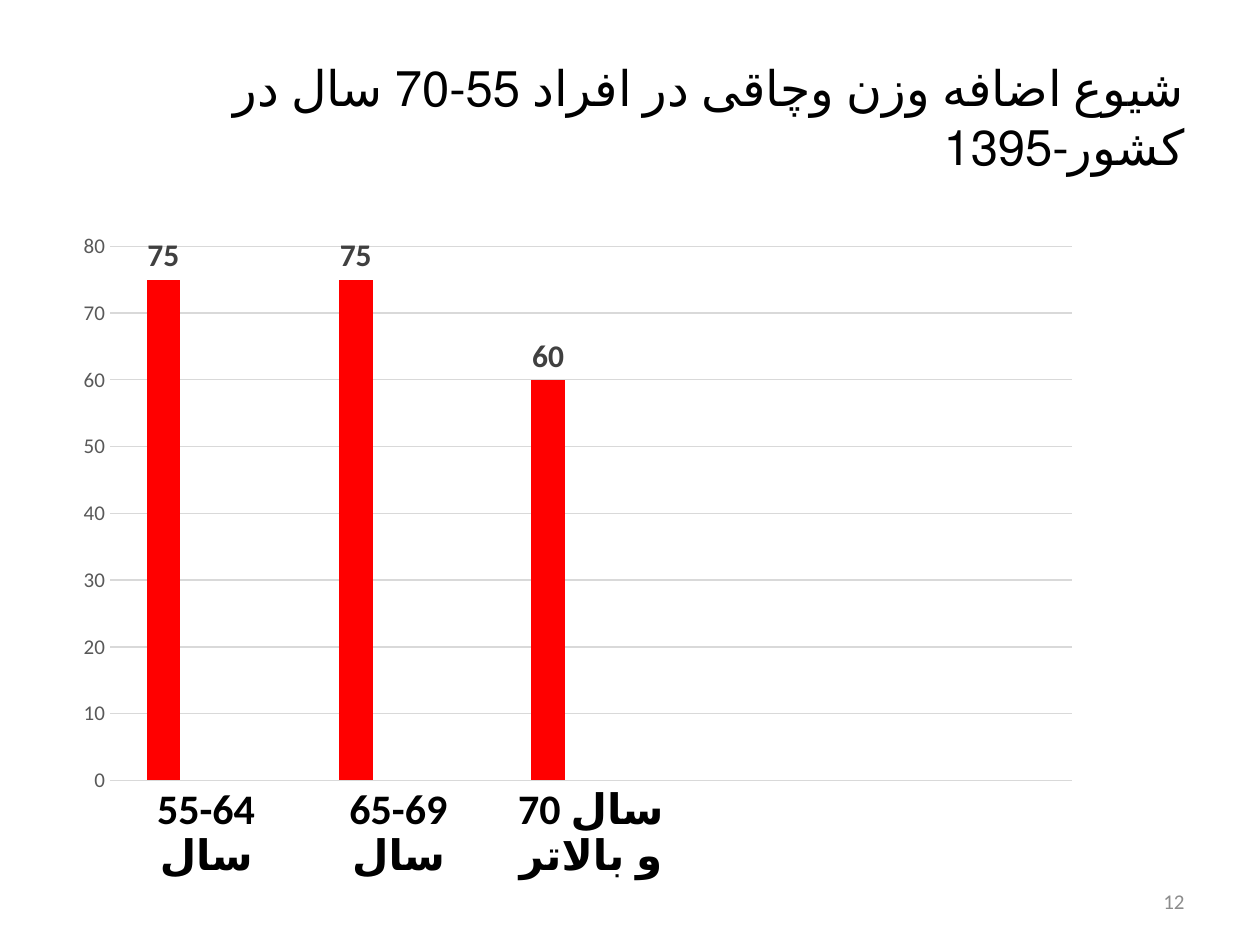
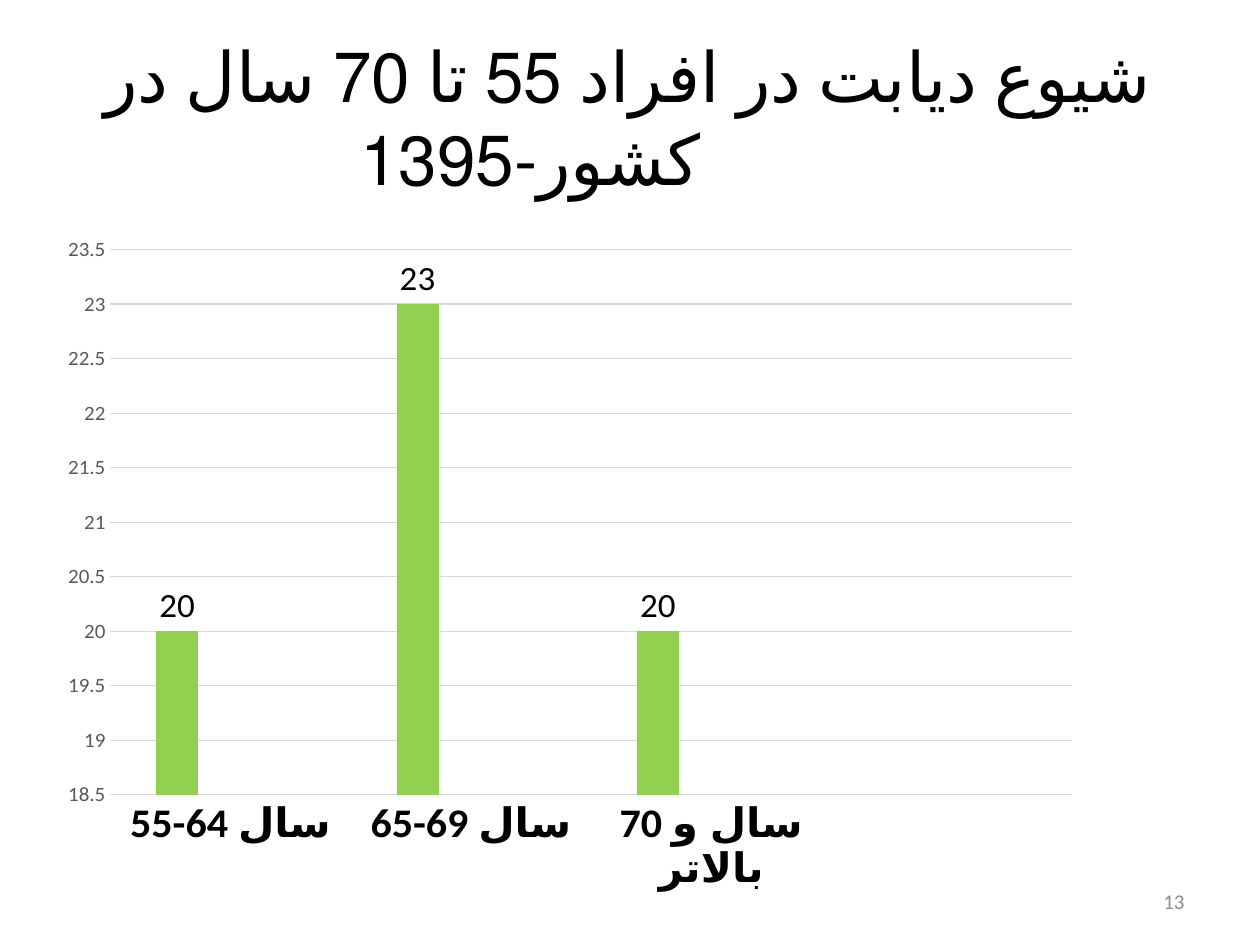
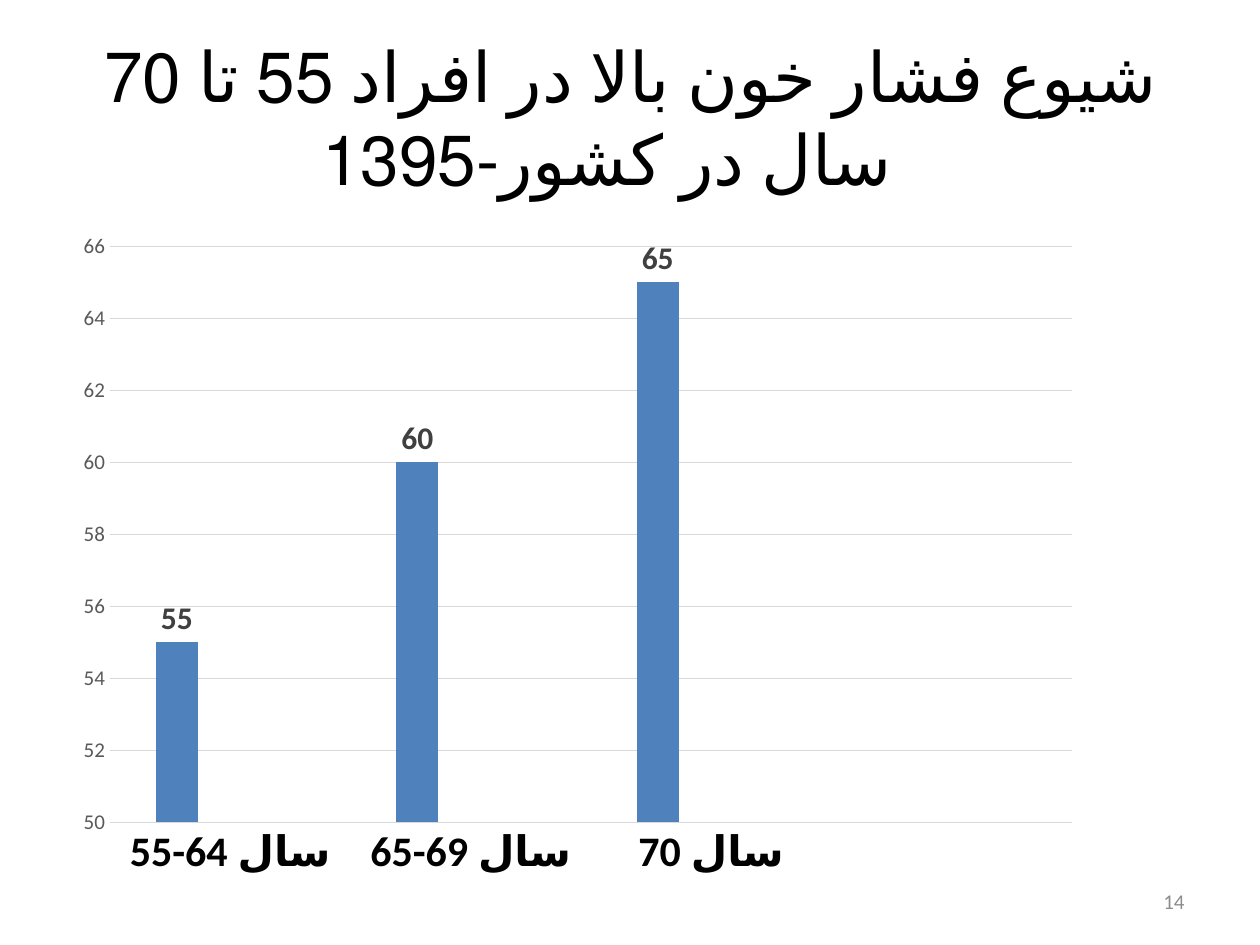
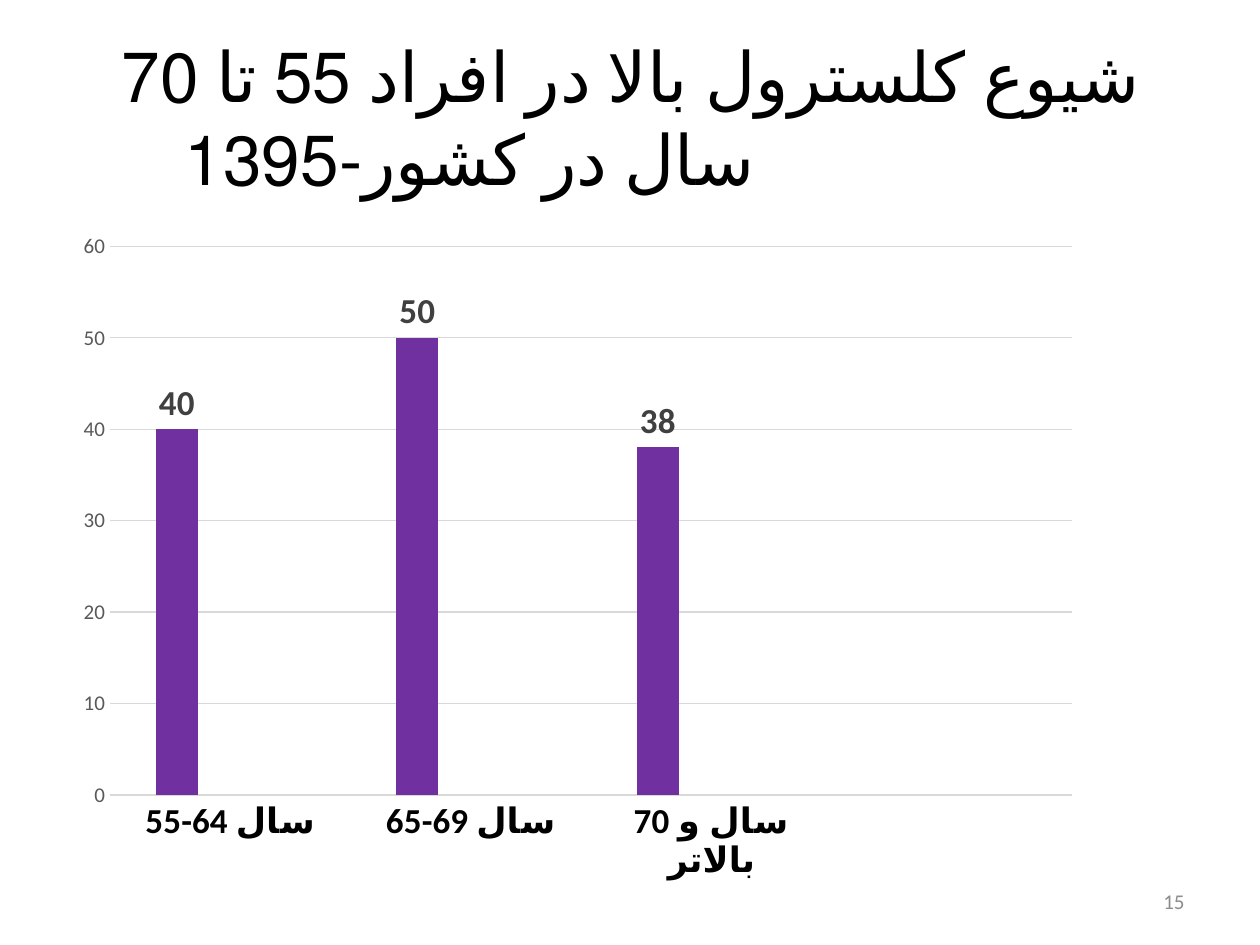
from lxml import etree
from pptx import Presentation
from pptx.chart.data import CategoryChartData
from pptx.dml.color import RGBColor
from pptx.enum.chart import XL_CHART_TYPE, XL_LABEL_POSITION, XL_TICK_MARK
from pptx.enum.lang import MSO_LANGUAGE_ID
from pptx.enum.text import MSO_ANCHOR, PP_ALIGN
from pptx.util import Inches, Pt

COLUMNS = XL_CHART_TYPE.COLUMN_CLUSTERED
OUTSIDE_END = XL_LABEL_POSITION.OUTSIDE_END
NO_TICK = XL_TICK_MARK.NONE
MIDDLE = MSO_ANCHOR.MIDDLE
LEFT, RIGHT = PP_ALIGN.LEFT, PP_ALIGN.RIGHT
PERSIAN = MSO_LANGUAGE_ID.FARSI

FONT = "Calibri"
COLORS = {
    "text": "000000", "number": "8C8C8C", "scale": "595959",
    "label": "404040", "grid": "D9D9D9",
    "red": "FF0000", "green": "92D050", "blue": "4F81BD", "purple": "7030A0",
    "second": "C0504D", "third": "9BBB59",
}
TITLE_AREA = (0.5, 0.3, 9, 1.25)
CHART_AREA = (0.5, 1.75, 8.17, 5.33)
NUMBER_AREA = (7.17, 6.95, 2.33, 0.4)
FIRST_NUMBER = 12

AGES = ["55-64 سال", "65-69 سال", "70 سال و بالاتر"]
# "scale" is the value axis: minimum, maximum, step
# "slots" is the number of category places, filled or free
# "indents" are the starts of a title's first line and of its second
SLIDES = [
    {"title": "شیوع اضافه وزن وچاقی در افراد 55-70 سال در کشور-1395",
     "title_format": {"size": 28, "align": RIGHT, "rtl": True},
     "ages": AGES, "values": [75, 75, 60], "slots": 5, "color": "red",
     "scale": (0, 80, 10), "age_size": 24,
     "label": {"size": 18, "bold": True, "color": "label"},
     "free_label": {"size": 16, "bold": True, "color": "label"}},
    {"title": "شیوع دیابت در افراد 55 تا 70 سال در کشور-1395",
     "title_format": {"size": 39.6, "indents": (0.23, 2.26)},
     "ages": AGES, "values": [20, 23, 20], "slots": 4, "color": "green",
     "scale": (18.5, 23.5, 0.5), "age_size": 24,
     "label": {"size": 20},
     "plot": {"x": 0.046, "y": 0.045, "w": 0.934, "h": 0.839}},
    {"title": "شیوع فشار خون بالا در افراد 55 تا 70 سال در کشور-1395",
     "title_format": {"size": 39.6, "indents": (0.23, 1.96)},
     "ages": AGES[:2] + ["70 سال"], "values": [55, 60, 65], "slots": 4,
     "color": "blue", "scale": (50, 66, 2), "age_size": 24,
     "label": {"size": 18, "bold": True, "color": "label"}},
    {"title": "شیوع کلسترول بالا در افراد 55 تا 70 سال در کشور-1395",
     "title_format": {"size": 39.6, "indents": (0.37, 0.87)},
     "ages": AGES, "values": [40, 50, 38], "slots": 4, "color": "purple",
     "scale": (0, 60, 10), "age_size": 20,
     "label": {"size": 20, "bold": True, "color": "label"}},
]


def rgb(name):
    return RGBColor.from_string(COLORS[name])


def set_font(font, size, color="text", bold=False):
    font.name, font.size, font.bold = FONT, Pt(size), bold
    font.color.rgb = rgb(color)


def add_text(page, text, area, size, color="text", align=LEFT, rtl=False,
             indents=None, language=None):
    box = page.shapes.add_textbox(*map(Inches, area))
    frame = box.text_frame
    frame.word_wrap = True
    frame.vertical_anchor = MIDDLE
    para = frame.paragraphs[0]
    para.alignment = align
    settings = para._p.get_or_add_pPr()
    if rtl:
        settings.set("rtl", "1")
    if indents:
        first, rest = map(Inches, indents)
        settings.set("marL", str(rest))
        settings.set("indent", str(first - rest))
    span = para.add_run()
    span.text = text
    set_font(span.font, size, color)
    if language:
        span.font.language_id = language


def set_grid_line(line):
    line.color.rgb = rgb("grid")
    line.width = Pt(0.75)


def show_values(series, **font_format):
    labels = series.data_labels
    labels.show_value = True
    labels.position = OUTSIDE_END
    set_font(labels.font, **font_format)


def place_plot(chart, sizes):
    """Fix the inner plot area, in fractions of the chart."""
    area = chart._chartSpace.chart.plotArea
    namespace = etree.QName(area).namespace
    for old in area.findall(f"{{{namespace}}}layout"):
        area.remove(old)
    layout = etree.Element(f"{{{namespace}}}layout")
    manual = etree.SubElement(layout, f"{{{namespace}}}manualLayout")
    settings = {"layoutTarget": "inner", "xMode": "edge", "yMode": "edge", **sizes}
    for tag, value in settings.items():
        etree.SubElement(manual, f"{{{namespace}}}{tag}").set("val", str(value))
    area.insert(0, layout)


def add_columns(page, content):
    slots = content["slots"]
    free = [None] * slots
    data = CategoryChartData()
    data.categories = content["ages"] + [""] * (slots - len(content["ages"]))
    data.add_series("Series 1", (content["values"] + free)[:slots])
    data.add_series("Series 2", free)
    data.add_series("Series 3", free)
    chart = page.shapes.add_chart(COLUMNS, *map(Inches, CHART_AREA), data).chart
    chart.has_title = chart.has_legend = False
    set_font(chart.font, 10)

    plot = chart.plots[0]
    plot.gap_width, plot.overlap, plot.vary_by_categories = 219, -27, False
    for series, color in zip(plot.series, (content["color"], "second", "third")):
        series.format.fill.solid()
        series.format.fill.fore_color.rgb = rgb(color)
    first, *others = plot.series
    show_values(first, **content["label"])
    if "free_label" in content:
        for series in others:
            show_values(series, **content["free_label"])

    ages, scale = chart.category_axis, chart.value_axis
    for axis in (ages, scale):
        axis.major_tick_mark = axis.minor_tick_mark = NO_TICK
    set_font(ages.tick_labels.font, content["age_size"], bold=True)
    set_grid_line(ages.format.line)
    set_font(scale.tick_labels.font, 12, "scale")
    scale.format.line.fill.background()
    set_grid_line(scale.major_gridlines.format.line)
    scale.minimum_scale, scale.maximum_scale, scale.major_unit = content["scale"]
    if "plot" in content:
        place_plot(chart, content["plot"])


def main():
    deck = Presentation()
    deck.slide_width, deck.slide_height = Inches(10), Inches(7.5)
    for number, content in enumerate(SLIDES, FIRST_NUMBER):
        page = deck.slides.add_slide(deck.slide_layouts[6])
        add_text(page, content["title"], TITLE_AREA, language=PERSIAN,
                 **content["title_format"])
        add_columns(page, content)
        add_text(page, str(number), NUMBER_AREA, 12, "number", RIGHT)
    deck.save("out.pptx")


if __name__ == "__main__":
    main()
